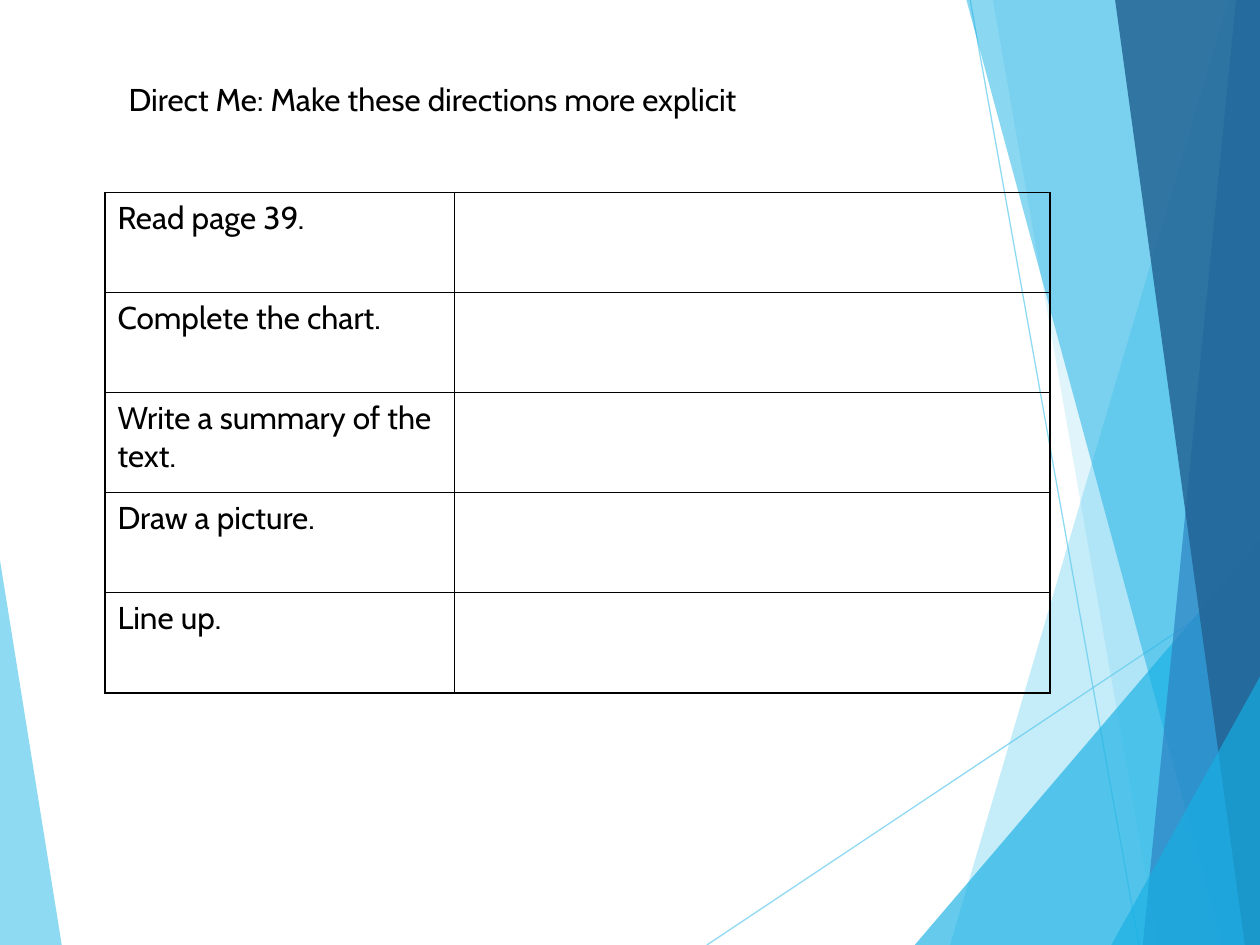
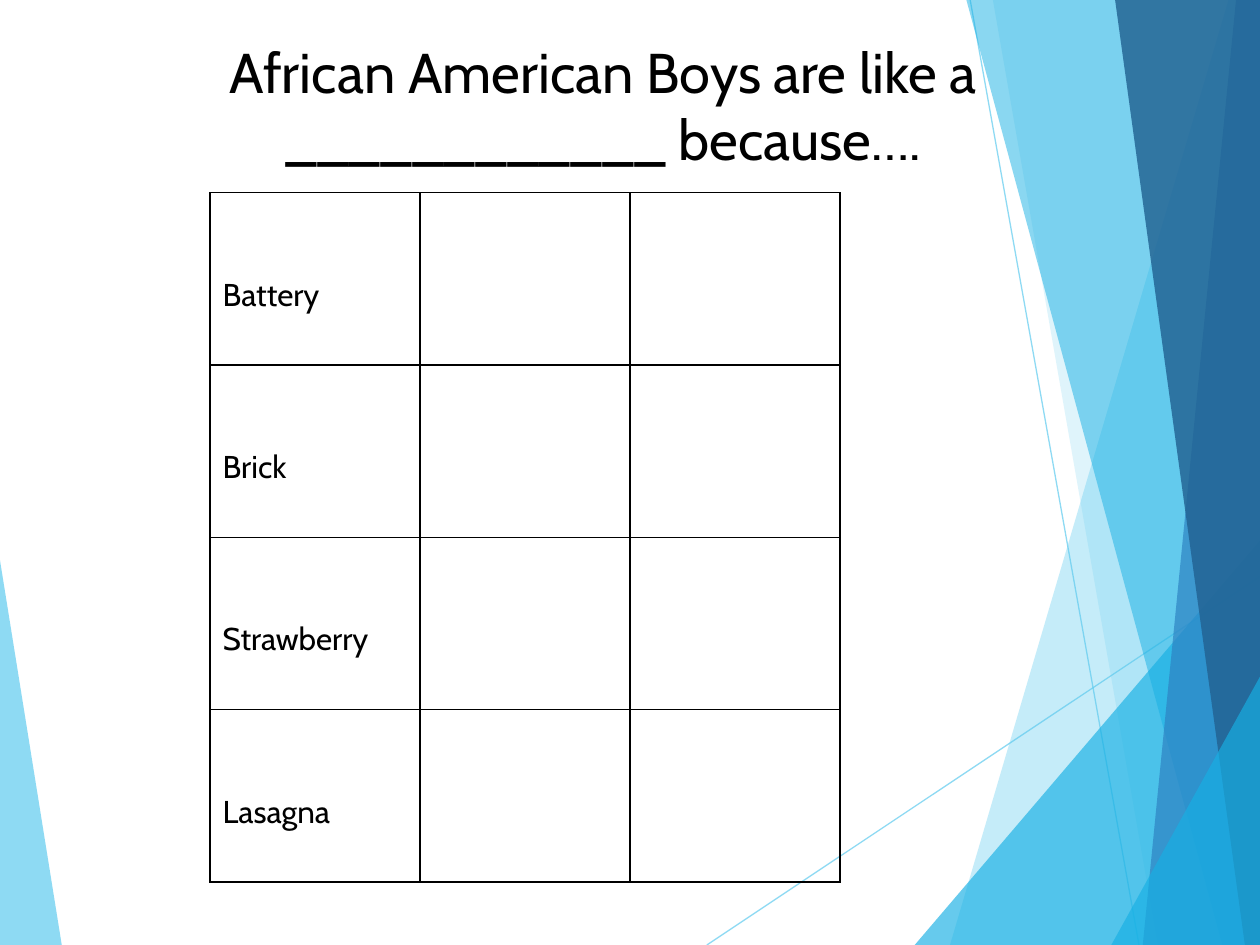
from dataclasses import dataclass

import pptx
import pptx.dml.color
import pptx.enum.shapes
import pptx.enum.text
import pptx.oxml.ns
import pptx.util
from lxml import etree

Point = tuple[float, float]  # percent of the slide's width and height


@dataclass(frozen=True)
class Theme:
    font: str = "Cabin"
    ink: str = "000000"
    sky: str = "5FCBEF"
    cyan: str = "17B0E4"
    blue: str = "2E83C3"
    navy: str = "226292"
    small: int = 18
    large: int = 32
    hairline: float = 0.75
    rule: float = 1.0


@dataclass(frozen=True)
class Facet:
    color: str
    opacity: int
    points: tuple[Point, ...]


@dataclass(frozen=True)
class Area:
    left: float
    top: float
    width: float
    height: float


@dataclass(frozen=True)
class Title:
    text: str
    area: Area
    size: int
    align: pptx.enum.text.PP_ALIGN


@dataclass(frozen=True)
class Worksheet:
    """A table with prompts in its first column and blank cells beside them."""
    prompts: tuple[str, ...]
    area: Area
    column_shares: tuple[float, ...]
    text_drop: float
    inner_rule: float


THEME = Theme()
WIDTH = pptx.util.Inches(10)
HEIGHT = pptx.util.Inches(7.5)
TOP_RIGHT: Point = (100, 0)
BOTTOM_RIGHT: Point = (100, 100)
RIGHT_SIDE = (BOTTOM_RIGHT, TOP_RIGHT)

LEFT_FACET = Facet(THEME.sky, 70, ((0, 59.3), (4.9, 100), (0, 100)))
RAYS = (
    Facet(THEME.sky, 70, ((56.1, 100), (100, 61))),
    Facet(THEME.sky, 70, ((77, 0), (90.4, 100))),
)
RIGHT_FACETS = (
    Facet(THEME.sky, 36, ((97.5, 0), (75.4, 100), *RIGHT_SIDE)),
    Facet(THEME.sky, 20, ((78.8, 0), (91.9, 100), *RIGHT_SIDE)),
    Facet(THEME.cyan, 66, ((72.6, 100), (100, 57.2), BOTTOM_RIGHT)),
    Facet(THEME.cyan, 50, ((76.7, 0), (97, 100), *RIGHT_SIDE)),
    Facet(THEME.blue, 70, ((98.1, 0), (90.7, 100), *RIGHT_SIDE)),
    Facet(THEME.navy, 82, ((88.5, 0), (98.8, 100), *RIGHT_SIDE)),
    Facet(THEME.cyan, 66, ((88.2, 100), (100, 71.6), BOTTOM_RIGHT)),
)

PAGES = (
    (
        Title("Direct Me: Make these directions more explicit",
              Area(9.2, 7.75, 66.7, 5.4), THEME.small, pptx.enum.text.PP_ALIGN.LEFT),
        Worksheet(("Read page 39.", "Complete the chart.", "Write a summary of the text.",
                   "Draw a picture.", "Line up."),
                  Area(8.33, 20.4, 75, 52.93), (0.37, 0.63), 0.67, THEME.hairline),
    ),
    (
        Title("African American Boys are like a ____________ because….",
              Area(10.8, 3.33, 74.2, 15.75), THEME.large, pptx.enum.text.PP_ALIGN.CENTER),
        Worksheet(("Battery", "Brick", "Strawberry", "Lasagna"),
                  Area(16.67, 20.4, 50, 72.93), (1 / 3,) * 3, 8.8, THEME.rule),
    ),
)


def across(percent: float) -> int:
    return round(WIDTH * percent / 100)


def down(percent: float) -> int:
    return round(HEIGHT * percent / 100)


def place(area: Area) -> tuple[int, int, int, int]:
    return across(area.left), down(area.top), across(area.width), down(area.height)


def rgb(color: str) -> pptx.dml.color.RGBColor:
    return pptx.dml.color.RGBColor.from_string(color)


def set_opacity(shape, opacity: int) -> None:
    color = shape.element.find(".//" + pptx.oxml.ns.qn("a:srgbClr"))
    etree.SubElement(color, pptx.oxml.ns.qn("a:alpha"), val=str(opacity * 1000))


def draw_facet(page, facet: Facet) -> None:
    start, *others = [(across(x), down(y)) for x, y in facet.points]
    builder = page.shapes.build_freeform(*start)
    builder.add_line_segments(others, close=True)
    shape = builder.convert_to_shape()
    shape.shadow.inherit = False
    shape.fill.solid()
    shape.fill.fore_color.rgb = rgb(facet.color)
    shape.line.fill.background()
    set_opacity(shape, facet.opacity)


def draw_ray(page, ray: Facet) -> None:
    (x1, y1), (x2, y2) = ray.points
    line = page.shapes.add_connector(pptx.enum.shapes.MSO_CONNECTOR.STRAIGHT,
                                     across(x1), down(y1), across(x2), down(y2))
    line.line.color.rgb = rgb(ray.color)
    line.line.width = pptx.util.Pt(THEME.hairline)
    set_opacity(line, ray.opacity)
    etree.SubElement(line.element.spPr, pptx.oxml.ns.qn("a:effectLst"))


def draw_backdrop(page) -> None:
    draw_facet(page, LEFT_FACET)
    for ray in RAYS:
        draw_ray(page, ray)
    for facet in RIGHT_FACETS:
        draw_facet(page, facet)


def format_text(frame, size: int, align=pptx.enum.text.PP_ALIGN.LEFT) -> None:
    for para in frame.paragraphs:
        para.alignment = align
        for font in (para.font, *(span.font for span in para.runs)):
            font.name = THEME.font
            font.size = pptx.util.Pt(size)
            font.color.rgb = rgb(THEME.ink)


def write_title(page, title: Title) -> None:
    box = page.shapes.title
    box.left, box.top, box.width, box.height = place(title.area)
    frame = box.text_frame
    frame.text = title.text
    frame.word_wrap = True
    frame.auto_size = pptx.enum.text.MSO_AUTO_SIZE.NONE
    frame.vertical_anchor = pptx.enum.text.MSO_ANCHOR.TOP
    format_text(frame, title.size, title.align)
    page.shapes.element.append(box.element)  # in front of the backdrop


def set_borders(cell, widths: dict[str, float]) -> None:
    properties = cell._tc.get_or_add_tcPr()
    for side, width in widths.items():
        line = etree.SubElement(properties, pptx.oxml.ns.qn(f"a:ln{side}"),
                                w=str(pptx.util.Pt(width)))
        fill = etree.SubElement(line, pptx.oxml.ns.qn("a:solidFill"))
        etree.SubElement(fill, pptx.oxml.ns.qn("a:srgbClr"), val=THEME.ink)


def draw_worksheet(page, sheet: Worksheet) -> None:
    row_count, column_count = len(sheet.prompts), len(sheet.column_shares)
    left, top, width, height = place(sheet.area)
    table = page.shapes.add_table(row_count, column_count, left, top, width, height).table
    table.first_row = table.horz_banding = False
    for column, share in zip(table.columns, sheet.column_shares):
        column.width = round(width * share)
    for r, prompt in enumerate(sheet.prompts):
        for c in range(column_count):
            cell = table.cell(r, c)
            cell.text = prompt if c == 0 else ""
            cell.margin_top = down(sheet.text_drop)
            format_text(cell.text_frame, THEME.small)
            set_borders(cell, {
                "L": THEME.rule if c == 0 else sheet.inner_rule,
                "R": THEME.rule if c == column_count - 1 else sheet.inner_rule,
                "T": THEME.hairline if r == 0 else sheet.inner_rule,
                "B": THEME.rule if r == row_count - 1 else sheet.inner_rule,
            })
            cell.fill.background()


def main() -> None:
    deck = pptx.Presentation()
    deck.slide_width, deck.slide_height = WIDTH, HEIGHT
    title_only = deck.slide_layouts.get_by_name("Title Only")
    for title, sheet in PAGES:
        page = deck.slides.add_slide(title_only)
        draw_backdrop(page)
        draw_worksheet(page, sheet)
        write_title(page, title)
    deck.save("out.pptx")


if __name__ == "__main__":
    main()
